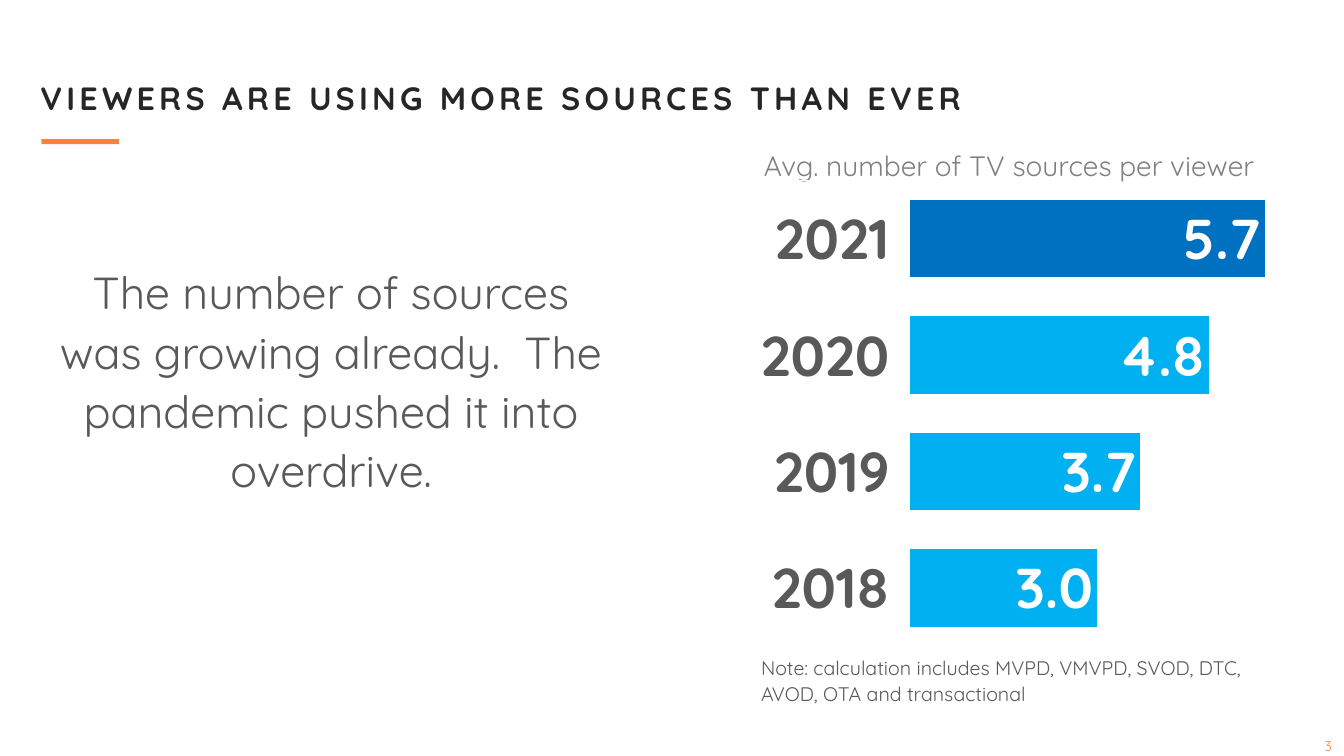
from dataclasses import dataclass

from lxml import etree
from pptx import Presentation
from pptx.chart.data import CategoryChartData
from pptx.dml.color import RGBColor
from pptx.enum.chart import XL_CHART_TYPE, XL_LABEL_POSITION
from pptx.enum.shapes import MSO_SHAPE
from pptx.enum.text import MSO_ANCHOR, PP_ALIGN
from pptx.oxml import parse_xml
from pptx.oxml.ns import nsdecls, qn
from pptx.util import Inches, Pt

BAR_CLUSTERED = XL_CHART_TYPE.BAR_CLUSTERED
INSIDE_END = XL_LABEL_POSITION.INSIDE_END
RECTANGLE = MSO_SHAPE.RECTANGLE
MIDDLE, BOTTOM = MSO_ANCHOR.MIDDLE, MSO_ANCHOR.BOTTOM
LEFT, CENTER, RIGHT = PP_ALIGN.LEFT, PP_ALIGN.CENTER, PP_ALIGN.RIGHT


@dataclass(frozen=True)
class Theme:
    font: str = "Quicksand"
    title: str = "262626"
    body: str = "595959"
    caption: str = "808080"
    accent: str = "FF8139"
    bar: str = "00B0F0"
    latest_bar: str = "0070C0"
    white: str = "FFFFFF"
    black: str = "000000"
    title_size: int = 23
    message_size: int = 32
    figure_size: int = 40
    caption_size: int = 20
    chart_size: int = 18
    note_size: int = 14
    number_size: int = 10


THEME = Theme()
SOURCES_BY_YEAR = {"2018": 3.0, "2019": 3.7, "2020": 4.8, "2021": 5.7}
CHART_TOP, CHART_HEIGHT = 1.79, 4.62
PLOT_FRAME = {"x": 0.318, "y": 0, "w": 0.682, "h": 1}


def set_values(target, values):
    for name, value in values.items():
        setattr(target, name, value)


def format_font(font, size, color, bold=False):
    set_values(font, {"name": THEME.font, "size": Pt(size), "bold": bold})
    font.color.rgb = RGBColor.from_string(color)


def place(shape, left, top, width, height):
    set_values(shape, {"left": Inches(left), "top": Inches(top),
                       "width": Inches(width), "height": Inches(height)})


def fill_solid(fill, color):
    fill.solid()
    fill.fore_color.rgb = RGBColor.from_string(color)


def add_title(slide, text):
    title = slide.shapes.title
    place(title, 0.3, 0.52, 12.72, 0.86)
    title.text_frame.text = text
    title.text_frame.vertical_anchor = MIDDLE
    paragraph = title.text_frame.paragraphs[0]
    set_values(paragraph, {"alignment": LEFT, "line_spacing": 1.1})
    run = paragraph.runs[0]
    format_font(run.font, THEME.title_size, THEME.title, bold=True)
    run.font._element.set("spc", "300")


def add_accent_bar(slide):
    bar = slide.shapes.add_shape(
        RECTANGLE, Inches(0.41), Inches(1.38), Inches(0.77), Inches(0.05))
    bar.shadow.inherit = False
    fill_solid(bar.fill, THEME.accent)
    bar.line.fill.background()


def add_text(slide, frame, text, size, color, alignment=CENTER, anchor=MIDDLE):
    box = slide.shapes.add_textbox(*map(Inches, frame))
    set_values(box.text_frame, {"word_wrap": True, "vertical_anchor": anchor})
    paragraph = box.text_frame.paragraphs[0]
    set_values(paragraph, {"alignment": alignment, "line_spacing": 1.1})
    run = paragraph.add_run()
    run.text = text
    format_font(run.font, size, color)


def set_plot_frame(chart):
    """Fix the inner plot area as fractions of the chart."""
    settings = [("layoutTarget", "inner"), ("xMode", "edge"), ("yMode", "edge")]
    settings += PLOT_FRAME.items()
    children = "".join(f'<c:{name} val="{value}"/>' for name, value in settings)
    layout = parse_xml(f'<c:layout {nsdecls("c")}><c:manualLayout>{children}'
                       '</c:manualLayout></c:layout>')
    plot_area = chart._chartSpace.chart.plotArea
    for old_layout in plot_area.findall(qn("c:layout")):
        plot_area.remove(old_layout)
    plot_area.insert(0, layout)


def add_sources_chart(slide):
    data = CategoryChartData(number_format="0.0")
    data.categories = [str(n + 1) for n in range(len(SOURCES_BY_YEAR))]
    data.add_series("Series 1", SOURCES_BY_YEAR.values())
    chart = slide.shapes.add_chart(
        BAR_CLUSTERED, Inches(7.3), Inches(CHART_TOP), Inches(5.43),
        Inches(CHART_HEIGHT), data).chart
    set_values(chart, {"has_legend": False, "has_title": False})
    format_font(chart.font, THEME.chart_size, THEME.black)
    set_plot_frame(chart)
    for axis in (chart.category_axis, chart.value_axis):
        set_values(axis, {"visible": False, "has_major_gridlines": False})
    set_values(chart.value_axis, {"minimum_scale": 0, "maximum_scale": 6})

    plot = chart.plots[0]
    set_values(plot, {"gap_width": 50, "vary_by_categories": False,
                      "has_data_labels": True})
    set_values(plot.data_labels, {
        "show_value": True, "position": INSIDE_END,
        "number_format": "0.0", "number_format_is_linked": False})
    format_font(plot.data_labels.font, THEME.figure_size, THEME.white, bold=True)
    series = plot.series[0]
    fill_solid(series.format.fill, THEME.bar)
    latest = series.points[len(SOURCES_BY_YEAR) - 1]
    fill_solid(latest.format.fill, THEME.latest_bar)


def add_year_table(slide):
    years = list(reversed(SOURCES_BY_YEAR))
    table = slide.shapes.add_table(
        len(years), 1, Inches(6.88), Inches(CHART_TOP), Inches(2.04),
        Inches(CHART_HEIGHT)).table
    set_values(table, {"first_row": False, "horz_banding": False})
    for cell, year in zip(table.iter_cells(), years):
        cell.text = year
        cell.vertical_anchor = MIDDLE
        cell.fill.background()
        paragraph = cell.text_frame.paragraphs[0]
        paragraph.alignment = RIGHT
        format_font(paragraph.runs[0].font, THEME.figure_size, THEME.body, bold=True)


def add_slide_number(slide, number):
    box = slide.shapes.add_textbox(
        Inches(12.92), Inches(7.27), Inches(0.51), Inches(0.35))
    paragraph = box.text_frame.paragraphs[0]
    paragraph.alignment = CENTER
    run = paragraph.add_run()
    run.text = number
    format_font(run.font, THEME.number_size, THEME.accent)
    field = etree.SubElement(paragraph._p, qn("a:fld"), {
        "id": "{B6F15528-21DE-4FAA-801E-634DDDAF4B2B}", "type": "slidenum"})
    field.extend(list(run._r))
    paragraph._p.remove(run._r)


def main():
    presentation = Presentation()
    set_values(presentation, {"slide_width": Inches(13.33),
                              "slide_height": Inches(7.5)})
    presentation.element.set("firstSlideNum", "3")
    slide = presentation.slides.add_slide(presentation.slide_layouts[5])
    add_title(slide, "VIEWERS ARE USING MORE SOURCES THAN EVER")
    add_accent_bar(slide)
    add_text(slide, (0.46, 2.54, 5.65, 2.42),
             "The number of sources was growing already.  "
             "The pandemic pushed it into overdrive.",
             THEME.message_size, THEME.body)
    add_text(slide, (7.21, 1.48, 5.6, 0.38), "Avg. number of TV sources per viewer",
             THEME.caption_size, THEME.caption, anchor=BOTTOM)
    add_sources_chart(slide)
    add_year_table(slide)
    add_text(slide, (7.45, 6.51, 5.43, 0.47),
             "Note: calculation includes MVPD, VMVPD, SVOD, DTC, "
             "AVOD, OTA and transactional",
             THEME.note_size, THEME.body, alignment=LEFT)
    add_slide_number(slide, "3")
    presentation.save("out.pptx")


if __name__ == "__main__":
    main()
